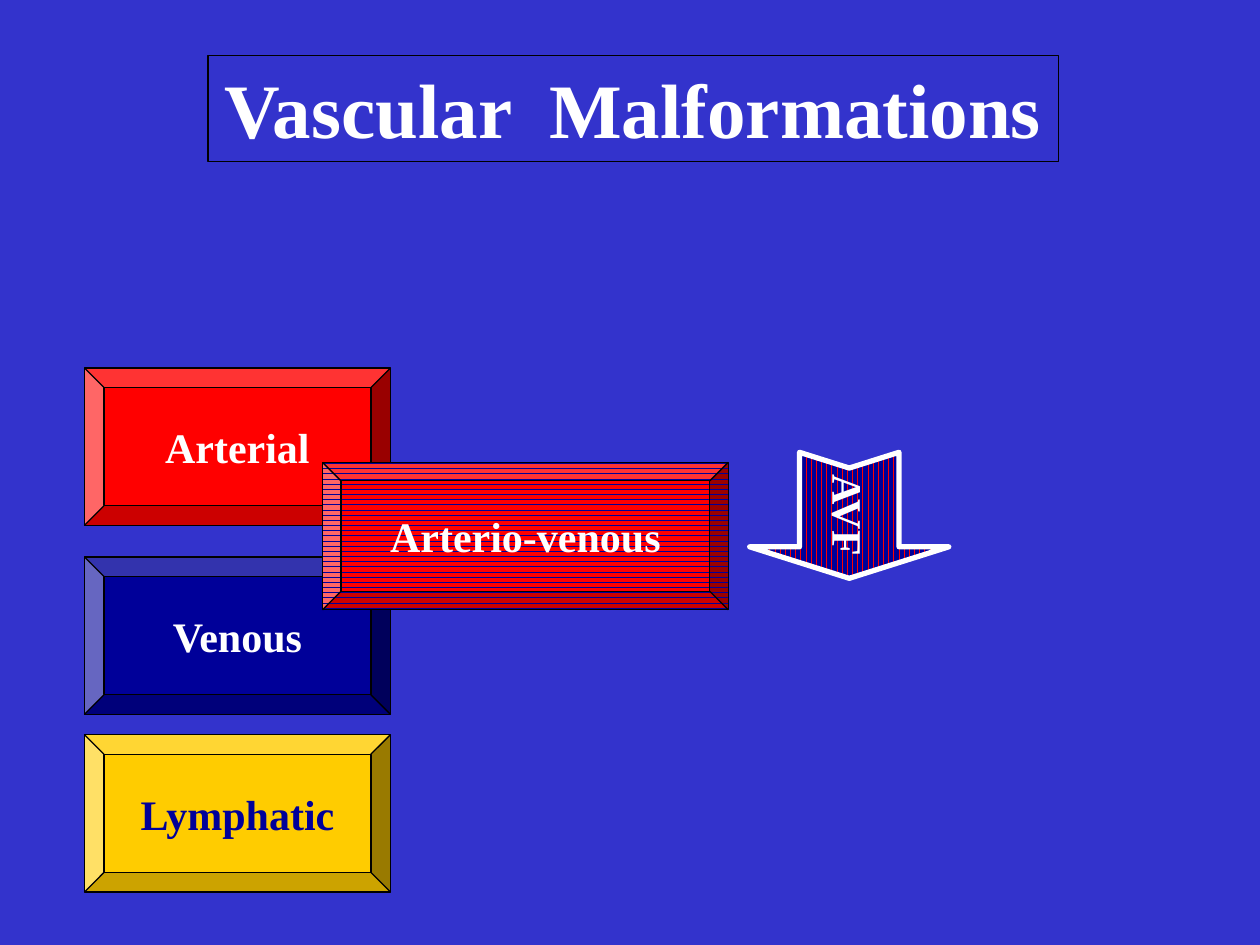
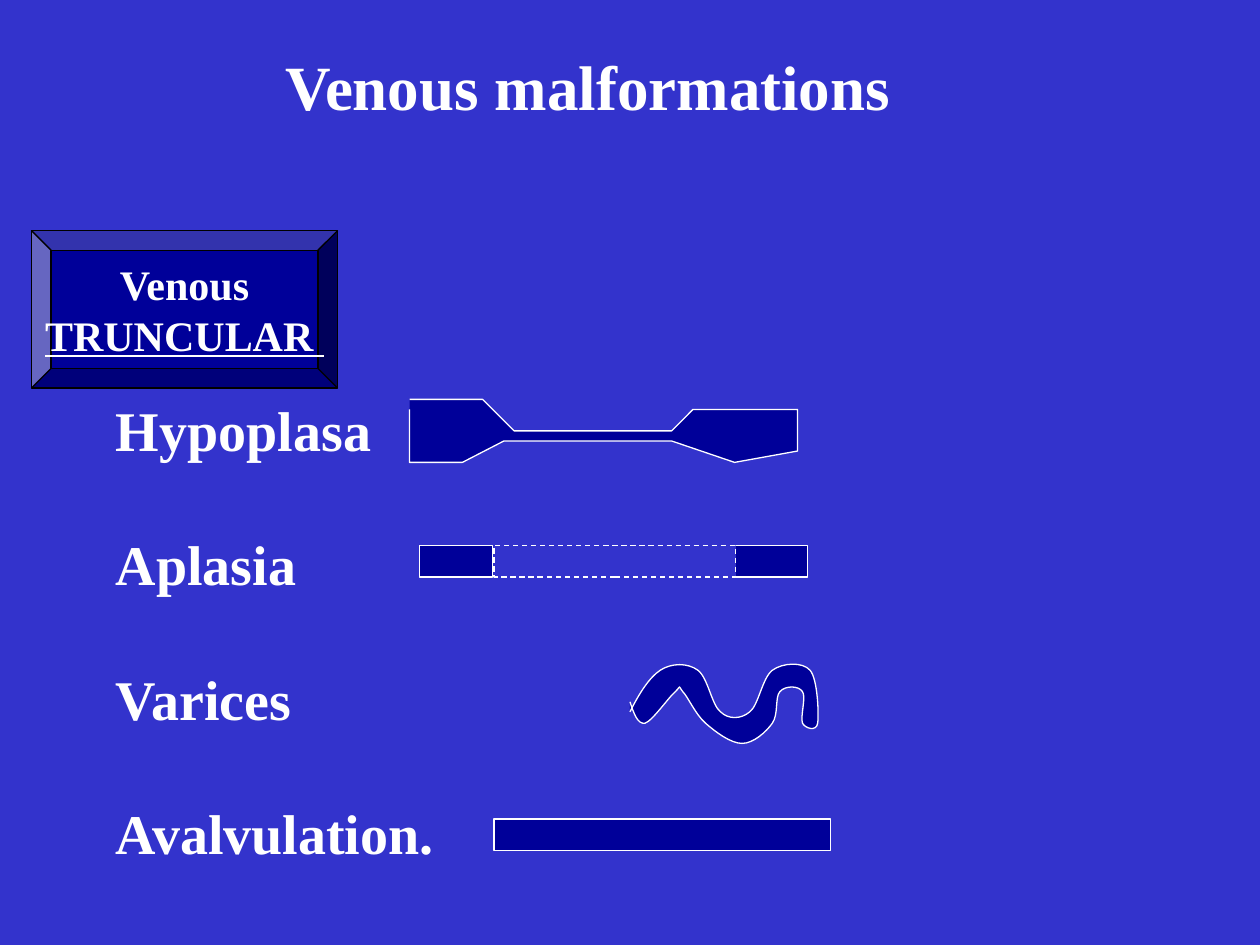
from lxml import etree
from pptx import Presentation
from pptx.dml.color import RGBColor
from pptx.enum.dml import MSO_LINE, MSO_PATTERN
from pptx.enum.shapes import MSO_SHAPE
from pptx.enum.text import MSO_ANCHOR, MSO_AUTO_SIZE, PP_ALIGN
from pptx.oxml.ns import qn
from pptx.util import Inches, Pt

BEVEL, RECTANGLE = MSO_SHAPE.BEVEL, MSO_SHAPE.RECTANGLE
NOTCHED_ARROW = MSO_SHAPE.NOTCHED_RIGHT_ARROW
CENTER, LEFT = PP_ALIGN.CENTER, PP_ALIGN.LEFT
MIDDLE, GROW = MSO_ANCHOR.MIDDLE, MSO_AUTO_SIZE.SHAPE_TO_FIT_TEXT
FONT = "Times New Roman"
COLORS = {
    "background": "3333CC", "artery": "FF0000", "vein": "000099",
    "lymph": "FFCC00", "white": "FFFFFF", "black": "000000",
}

# text, top, fill, text colour
VESSEL_TYPES = [
    ("Arterial", 2.92, "artery", "white"),
    ("Venous", 4.42, "vein", "white"),
    ("Lymphatic", 5.83, "lymph", "vein"),
]
BEVEL_SIZE = (2.43, 1.25)
ARTERIOVENOUS_FILL = (MSO_PATTERN.DARK_HORIZONTAL, "artery", "vein")
FISTULA_FILL = (MSO_PATTERN.DARK_VERTICAL, "vein", "artery")

TRUNCULAR_FORMS = ["Hypoplasa", "Aplasia", "Varices", "Avalvulation."]
LABEL_GAP = 38.4
HYPOPLASIA = [
    (3.25, 3.25), (3.25, 3.67), (3.67, 3.67), (4, 3.5), (5.33, 3.5),
    (5.83, 3.67), (6.33, 3.58), (6.33, 3.25), (5.5, 3.25), (5.33, 3.42),
    (4.08, 3.42), (3.83, 3.17), (3.25, 3.17),
]
# left, width, fill, dash
APLASIA = [
    (3.33, 0.58, "vein", None),
    (5.83, 0.58, "vein", None),
    (3.92, 1.92, "background", MSO_LINE.DASH),
]
# the start, then two control points and an end point for each curve
VARIX = [
    (5, 5.65),
    (5.07, 5.51), (5.15, 5.38), (5.24, 5.32),
    (5.33, 5.26), (5.46, 5.26), (5.54, 5.32),
    (5.62, 5.38), (5.65, 5.6), (5.72, 5.65),
    (5.78, 5.71), (5.88, 5.71), (5.95, 5.65),
    (6.02, 5.6), (6.05, 5.38), (6.13, 5.32),
    (6.21, 5.26), (6.37, 5.25), (6.43, 5.32),
    (6.49, 5.39), (6.5, 5.67), (6.49, 5.74),
    (6.48, 5.81), (6.39, 5.78), (6.37, 5.74),
    (6.35, 5.69), (6.4, 5.53), (6.37, 5.49),
    (6.34, 5.44), (6.23, 5.44), (6.19, 5.49),
    (6.15, 5.53), (6.18, 5.67), (6.13, 5.74),
    (6.08, 5.81), (5.98, 5.9), (5.89, 5.9),
    (5.8, 5.9), (5.68, 5.81), (5.6, 5.74),
    (5.52, 5.67), (5.46, 5.53), (5.42, 5.49),
    (5.38, 5.44), (5.41, 5.44), (5.36, 5.49),
    (5.31, 5.53), (5.18, 5.72), (5.12, 5.74),
    (5.06, 5.75), (5.03, 5.66), (5, 5.57),
]


def rgb(name):
    return RGBColor.from_string(COLORS[name])


def add_page(deck):
    page = deck.slides.add_slide(deck.slide_layouts[6])
    page.background.fill.solid()
    page.background.fill.fore_color.rgb = rgb("background")
    return page


def paint(shape, fill, line, width=0.75, dash=None):
    """Fill is a colour name or a (pattern, foreground, background) tuple."""
    shape.shadow.inherit = False
    if isinstance(fill, tuple):
        shape.fill.patterned()
        shape.fill.pattern, front, back = fill
        shape.fill.fore_color.rgb = rgb(front)
        shape.fill.back_color.rgb = rgb(back)
    else:
        shape.fill.solid()
        shape.fill.fore_color.rgb = rgb(fill)
    shape.line.color.rgb = rgb(line)
    shape.line.width = Pt(width)
    if dash:
        shape.line.dash_style = dash


def write(shape, lines, size=24, color="white", align=CENTER, gap=0, underlined=()):
    frame = shape.text_frame
    frame.word_wrap = False
    for index, line in enumerate(lines):
        para = frame.paragraphs[0] if index == 0 else frame.add_paragraph()
        para.alignment = align
        if index and gap:
            para.space_before = Pt(gap)
        span = para.add_run()
        span.text = line
        span.font.name = FONT
        span.font.size = Pt(size)
        span.font.bold = True
        span.font.color.rgb = rgb(color)
        if line in underlined:
            span.font.underline = True


def add_preset(parent, kind, place, fill, line="black", width=0.75, dash=None):
    shape = parent.shapes.add_shape(kind, *map(Inches, place))
    paint(shape, fill, line, width, dash)
    shape.text_frame.vertical_anchor = MIDDLE
    return shape


def add_text(page, place, lines, size, **style):
    box = page.shapes.add_textbox(*map(Inches, place))
    write(box, lines, size, **style)
    box.text_frame.auto_size = GROW
    return box


def add_outline(page, points):
    start, *rest = [(Inches(x), Inches(y)) for x, y in points]
    builder = page.shapes.build_freeform(*start)
    builder.add_line_segments(rest, close=False)
    outline = builder.convert_to_shape()
    paint(outline, "vein", "white")
    return outline


def bend(outline):
    """Turn every three straight segments into one cubic Bezier curve."""
    segments = list(outline.element.iter(qn("a:lnTo")))
    for first in range(0, len(segments), 3):
        curve = etree.Element(qn("a:cubicBezTo"))
        segments[first].addprevious(curve)
        for segment in segments[first:first + 3]:
            curve.append(segment[0])
            segment.getparent().remove(segment)


def build_overview(deck):
    page = add_page(deck)
    for text, top, fill, color in VESSEL_TYPES:
        bevel = add_preset(page, BEVEL, (0.67, top, *BEVEL_SIZE), fill)
        write(bevel, [text], color=color)
    mixed = add_preset(page, BEVEL, (2.56, 3.67, 3.22, 1.17), ARTERIOVENOUS_FILL)
    write(mixed, ["Arterio-venous"])
    arrow = add_preset(page, NOTCHED_ARROW, (6.24, 3.3, 1, 1.58), FISTULA_FILL, "white", 3)
    arrow.adjustments[0], arrow.adjustments[1] = 0.5, 0.25
    arrow.rotation = 90
    write(arrow, ["AVF"])
    title = add_text(page, (1.65, 0.44, 6.75, 0.84), ["Vascular  Malformations"], 44)
    title.line.color.rgb = rgb("black")
    title.line.width = Pt(0.75)


def build_venous(deck):
    page = add_page(deck)
    bevel = add_preset(page, BEVEL, (0.25, 1.83, *BEVEL_SIZE), "vein")
    write(bevel, ["Venous", "TRUNCULAR "], underlined=["TRUNCULAR "])
    labels = add_text(page, (0.08, 3.09, 8.67, 3.87), TRUNCULAR_FORMS, 32,
                      align=LEFT, gap=LABEL_GAP)
    labels.text_frame.word_wrap = True
    labels.text_frame.margin_left = Inches(0.84)
    add_outline(page, HYPOPLASIA)
    bend(add_outline(page, VARIX))
    vessel = page.shapes.add_group_shape()
    for left, width, fill, dash in APLASIA:
        add_preset(vessel, RECTANGLE, (left, 4.33, width, 0.25), fill, "white", dash=dash)
    add_preset(page, RECTANGLE, (3.92, 6.5, 2.67, 0.25), "vein", "white")
    add_text(page, (2.14, 0.33, 5.05, 0.71), ["Venous malformations"], 36)


def main():
    deck = Presentation()
    deck.slide_width, deck.slide_height = Inches(10), Inches(7.5)
    build_overview(deck)
    build_venous(deck)
    deck.save("out.pptx")


if __name__ == "__main__":
    main()
